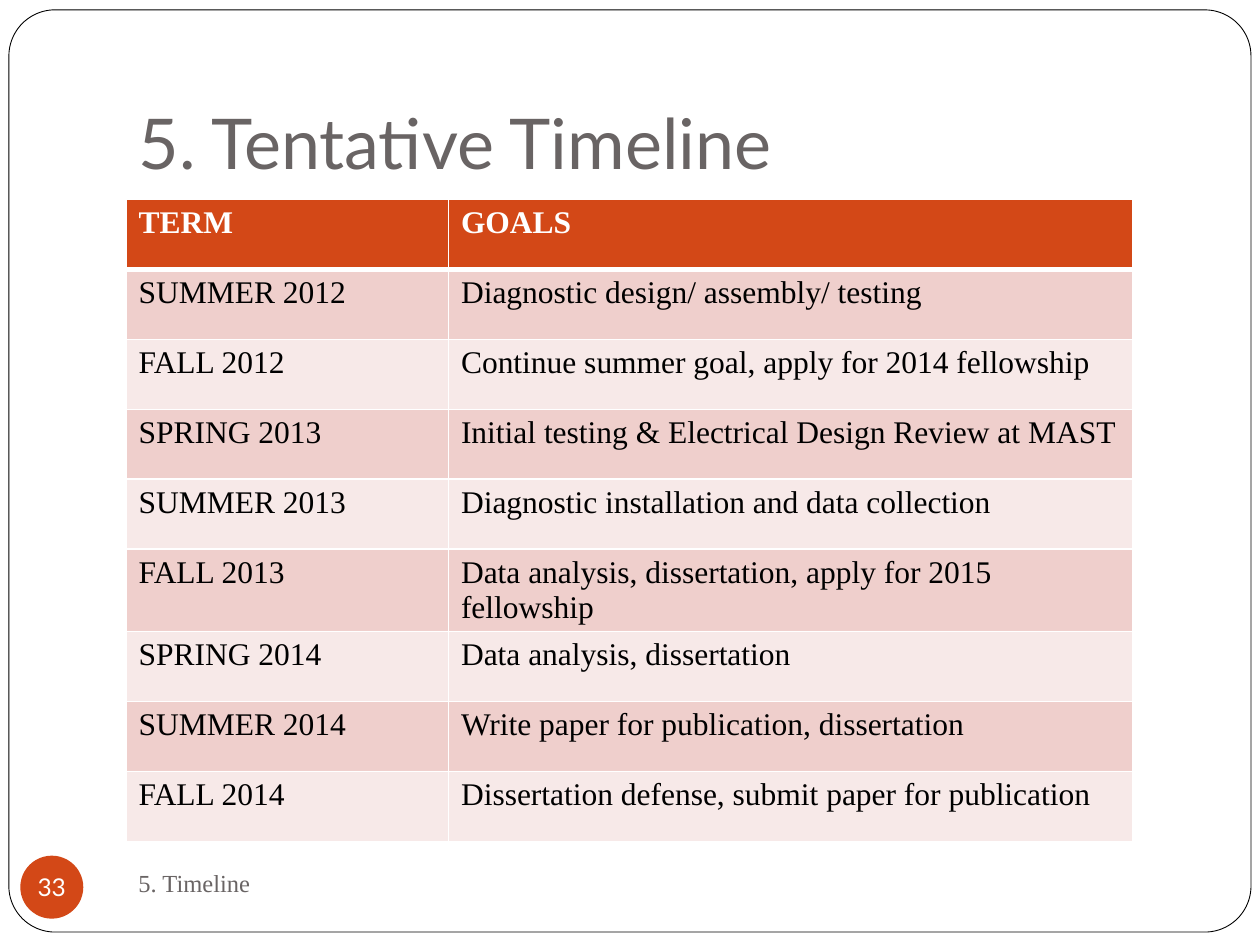
from dataclasses import dataclass

from lxml import etree
from pptx import Presentation
from pptx import util as u
from pptx.dml.color import RGBColor
from pptx.enum import shapes, text
from pptx.oxml import ns

WHITE = RGBColor(0xFF, 0xFF, 0xFF)
BLACK = RGBColor(0x00, 0x00, 0x00)
GREY = RGBColor(0x69, 0x64, 0x64)
ORANGE = RGBColor(0xD3, 0x48, 0x17)
PINK = RGBColor(0xEF, 0xCF, 0xCC)
PALE_PINK = RGBColor(0xF7, 0xE9, 0xE8)
SANS = "Lato"
SERIF = "Times New Roman"
LEFT = u.Cm(2.54)
ROW_HEIGHT = u.Cm(1.41)
COLUMN_WIDTHS = (u.Cm(6.5), u.Cm(13.8))


@dataclass
class Entry:
    term: str
    goal: str


HEADER = Entry("TERM", "GOALS")
ENTRIES = [
    Entry("SUMMER 2012", "Diagnostic design/ assembly/ testing"),
    Entry("FALL 2012", "Continue summer goal, apply for 2014 fellowship"),
    Entry("SPRING 2013", "Initial testing & Electrical Design Review at MAST"),
    Entry("SUMMER 2013", "Diagnostic installation and data collection"),
    Entry("FALL 2013", "Data analysis, dissertation, apply for 2015 fellowship"),
    Entry("SPRING 2014", "Data analysis, dissertation"),
    Entry("SUMMER 2014", "Write paper for publication, dissertation"),
    Entry("FALL 2014", "Dissertation defense, submit paper for publication"),
]


def write(tf, content: str, *, size: float, font: str, color: RGBColor,
          bold: bool = False, align=text.PP_ALIGN.LEFT, anchor=None) -> None:
    if anchor is not None:
        tf.vertical_anchor = anchor
    p = tf.paragraphs[0]
    p.alignment = align
    r = p.add_run()
    r.text = content
    r.font.size = u.Pt(size)
    r.font.name = font
    r.font.bold = bold
    r.font.color.rgb = color


def set_borders(cell, **widths: float) -> None:
    tc_pr = cell._tc.get_or_add_tcPr()
    for i, side in enumerate("LRTB"):
        ln = etree.Element(ns.qn(f"a:ln{side}"), w=str(u.Pt(widths.get(side, 1))))
        fill = etree.SubElement(ln, ns.qn("a:solidFill"))
        etree.SubElement(fill, ns.qn("a:srgbClr"), val=str(WHITE))
        tc_pr.insert(i, ln)


def add_frame(s) -> None:
    frame = s.shapes.add_shape(shapes.MSO_SHAPE.ROUNDED_RECTANGLE,
                               u.Cm(0.18), u.Cm(0.2), u.Cm(25.04), u.Cm(18.59))
    frame.adjustments[0] = 0.05
    frame.shadow.inherit = False
    frame.fill.solid()
    frame.fill.fore_color.rgb = WHITE
    frame.line.color.rgb = BLACK
    frame.line.width = u.Pt(0.5)
    s.shapes._spTree.insert(2, frame._element)


def add_title(s, content: str) -> None:
    sp = s.shapes.title
    sp.left, sp.top, sp.width, sp.height = LEFT, u.Cm(0.76), u.Cm(21.59), u.Cm(3.18)
    tf = sp.text_frame
    tf.margin_bottom = u.Cm(0.25)
    write(tf, content, size=40, font=SANS, color=GREY, anchor=text.MSO_ANCHOR.BOTTOM)


def add_page_number(s, number: str) -> None:
    sp = s.shapes.add_shape(shapes.MSO_SHAPE.OVAL,
                            u.Cm(0.41), u.Cm(17.25), u.Cm(1.27), u.Cm(1.27))
    sp.shadow.inherit = False
    sp.fill.solid()
    sp.fill.fore_color.rgb = ORANGE
    sp.line.fill.background()
    tf = sp.text_frame
    tf.margin_left = tf.margin_right = tf.margin_top = tf.margin_bottom = 0
    tf.word_wrap = False
    write(tf, number, size=14, font=SANS, color=WHITE,
          align=text.PP_ALIGN.CENTER, anchor=text.MSO_ANCHOR.MIDDLE)


def add_timeline(s, entries: list[Entry]) -> None:
    rows = [HEADER, *entries]
    table = s.shapes.add_table(len(rows), len(COLUMN_WIDTHS), LEFT, u.Cm(4.02),
                               sum(COLUMN_WIDTHS), ROW_HEIGHT * len(rows)).table
    for column, width in zip(table.columns, COLUMN_WIDTHS):
        column.width = width
    for i, entry in enumerate(rows):
        is_header = i == 0
        fill = ORANGE if is_header else (PALE_PINK, PINK)[i % 2]
        borders = {0: {"B": 3}, 1: {"T": 3}}.get(i, {})
        for cell, content in zip(table.rows[i].cells, (entry.term, entry.goal)):
            cell.fill.solid()
            cell.fill.fore_color.rgb = fill
            set_borders(cell, **borders)
            write(cell.text_frame, content, size=18, font=SERIF,
                  color=WHITE if is_header else BLACK, bold=is_header)


def add_footer(s, content: str) -> None:
    tf = s.shapes.add_textbox(LEFT, u.Cm(17.15), u.Cm(11), u.Cm(1.27)).text_frame
    tf.word_wrap = True
    write(tf, content, size=14, font=SERIF, color=GREY, anchor=text.MSO_ANCHOR.MIDDLE)


def main() -> None:
    prs = Presentation()
    prs.slide_width, prs.slide_height = u.Cm(25.4), u.Cm(19.05)
    s = prs.slides.add_slide(prs.slide_layouts[5])
    add_frame(s)
    add_title(s, "5. Tentative Timeline")
    add_page_number(s, "33")
    add_timeline(s, ENTRIES)
    add_footer(s, "5. Timeline")
    prs.save("out.pptx")


if __name__ == "__main__":
    main()
